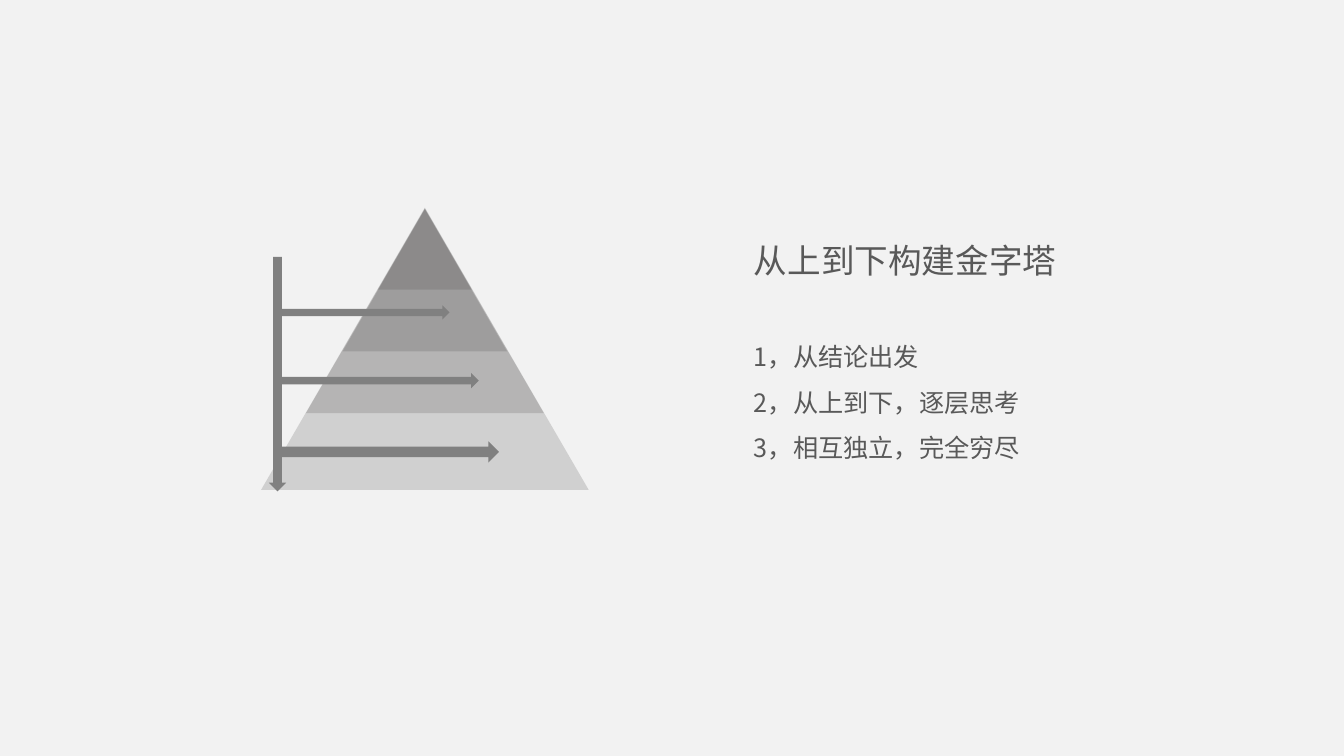
from lxml.etree import SubElement
from pptx import Presentation
from pptx.dml.color import RGBColor
from pptx.enum.shapes import MSO_SHAPE
from pptx.enum.text import MSO_AUTO_SIZE
from pptx.oxml.ns import qn
from pptx.util import Pt

FONT = "Noto Sans CJK SC"


def paint(fill, color):
    fill.solid()
    fill.fore_color.rgb = RGBColor.from_string(color)


def add_solid(shapes, kind, box, color):
    """Add a preset shape with a plain fill, no outline and no shadow."""
    solid = shapes.add_shape(kind, *map(Pt, box))
    solid.shadow.inherit = False
    solid.line.fill.background()
    paint(solid.fill, color)
    return solid


prs = Presentation()
prs.slide_width, prs.slide_height = Pt(960), Pt(540)
slide = prs.slides.add_slide(prs.slide_layouts[6])
paint(slide.background.fill, "F2F2F2")

# Heading and numbered points
texts = [
    ((531.4, 167.8, 268.6, 36), 24, 1.0, ["从上到下构建金字塔"]),
    ((531.4, 229.7, 253.4, 105), 18, 1.5,
     ["1，从结论出发", "2，从上到下，逐层思考", "3，相互独立，完全穷尽"]),
]
for box, size, spacing, lines in texts:
    frame = slide.shapes.add_textbox(*map(Pt, box)).text_frame
    frame.word_wrap = True
    frame.auto_size = MSO_AUTO_SIZE.SHAPE_TO_FIT_TEXT
    for i, line in enumerate(lines):
        paragraph = frame.paragraphs[0] if i == 0 else frame.add_paragraph()
        paragraph.line_spacing = spacing
        run = paragraph.add_run()
        run.text = line
        run.font.size = Pt(size)
        run.font.name = FONT
        paint(run.font.fill, "595959")
        SubElement(run.font._element, qn("a:ea"), typeface=FONT)

# Translucent triangles share an apex, so each overlap darkens a layer
pyramid = slide.shapes.add_group_shape()
APEX_X = 303.5
for top, width, height in [(148.3, 234, 201.6), (149, 170, 146.2),
                           (149.6, 117.4, 101.3), (149, 67, 57.8)]:
    layer = add_solid(pyramid.shapes, MSO_SHAPE.ISOSCELES_TRIANGLE,
                      (APEX_X - width / 2, top, width, height), "3B3838")
    color = layer.fill._xPr.find(qn("a:solidFill"))[0]
    SubElement(color, qn("a:alpha"), val="18000")

# Downward arrow with a branch into each lower layer
add_solid(slide.shapes, MSO_SHAPE.DOWN_ARROW, (192, 183.4, 12.4, 167.6), "808080")
for top, width, height in [(218.1, 122.4, 10.2), (266.4, 143.3, 11), (315.2, 157.7, 15.2)]:
    add_solid(slide.shapes, MSO_SHAPE.RIGHT_ARROW, (198.7, top, width, height), "808080")

prs.save("out.pptx")
